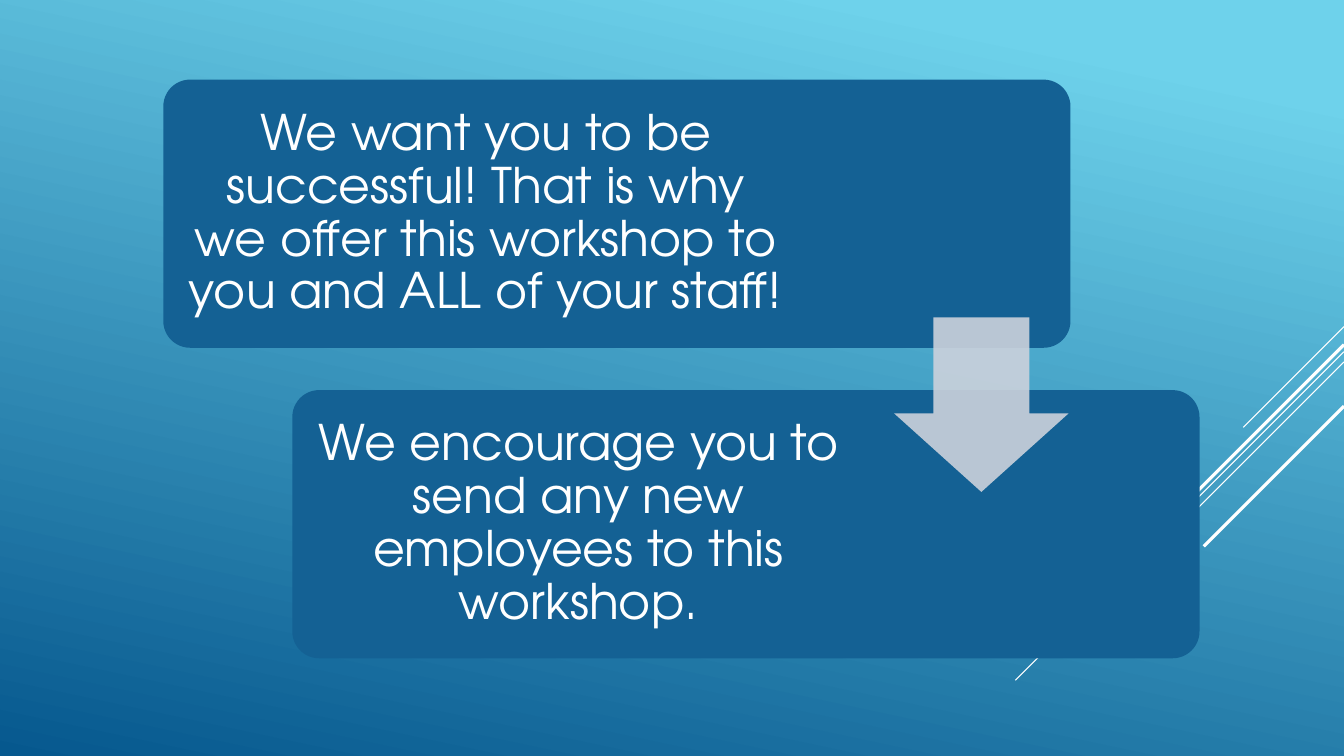
from dataclasses import dataclass

from lxml.etree import SubElement
from pptx import Presentation
from pptx.dml.color import RGBColor
from pptx.enum.shapes import MSO_CONNECTOR, MSO_SHAPE
from pptx.enum.text import MSO_ANCHOR, PP_ALIGN
from pptx.oxml.ns import qn
from pptx.shapes.autoshape import Shape
from pptx.slide import Slide
from pptx.util import Inches, Length, Pt

WIDTH, HEIGHT = 13.333, 7.5
FONT = "TeX Gyre Adventor"
COLOURS = {
    "sky": "6ED2EB",
    "deep": "06588E",
    "card": "146194",
    "arrow": "CCD2DC",
    "white": "FFFFFF",
}
CARD_LEFT, CARD_TOP = 12.15, 10.53
CARD_WIDTH, CARD_HEIGHT = 67.5, 35.47
STEP_RIGHT, STEP_DOWN = 9.6, 41.07
CARD_PADDING = 0.6


@dataclass(frozen=True)
class Streak:
    top: float
    run: float
    weight: float


@dataclass(frozen=True)
class Card:
    text: str
    text_width: float


STREAKS = [
    Streak(43.2, 7.5, 0.75),
    Streak(46.53, 24.45, 0.75),
    Streak(47.87, 15.53, 0.75),
    Streak(45.6, 14.33, 2.25),
    Streak(53.73, 10.43, 2.25),
]
CARDS = [
    Card("We want you to be successful! That is why we offer this workshop "
         "to you and ALL of your staff!", 46.8),
    Card("We encourage you to send any new employees to this workshop.", 41.4),
]


def across(percent: float) -> Length:
    return Inches(WIDTH * percent / 100)


def down(percent: float) -> Length:
    return Inches(HEIGHT * percent / 100)


def colour(name: str) -> RGBColor:
    return RGBColor.from_string(COLOURS[name])


def paint_background(page: Slide) -> None:
    fill = page.background.fill
    fill.gradient()
    fill.gradient_angle = 258
    for stop, position, name in zip(fill.gradient_stops, (0.1, 1), ("sky", "deep")):
        stop.position = position
        stop.color.rgb = colour(name)


def draw_streak(page: Slide, streak: Streak) -> None:
    right, top, run = across(100), down(streak.top), across(streak.run)
    line = page.shapes.add_connector(
        MSO_CONNECTOR.STRAIGHT, right, top, right - run, top + run)
    line.line.color.rgb = colour("white")
    line.line.width = Pt(streak.weight)
    SubElement(line._element.spPr, qn("a:effectLst"))


def draw_shape(page: Slide, kind: MSO_SHAPE, box: tuple[Length, ...],
               fill: str, adjustments: list[float]) -> Shape:
    shape = page.shapes.add_shape(kind, *box)
    shape.shadow.inherit = False
    shape.fill.solid()
    shape.fill.fore_color.rgb = colour(fill)
    shape.line.fill.background()
    for index, value in enumerate(adjustments):
        shape.adjustments[index] = value
    return shape


def write_text(page: Slide, text: str, *, box: tuple[Length, ...], size: float,
               name: str, inset: float, spacing: float) -> None:
    frame = page.shapes.add_textbox(*box).text_frame
    frame.word_wrap = True
    frame.vertical_anchor = MSO_ANCHOR.MIDDLE
    frame.margin_left = frame.margin_right = Inches(inset)
    frame.margin_top = frame.margin_bottom = Inches(inset)
    para = frame.paragraphs[0]
    para.alignment = PP_ALIGN.CENTER
    para.line_spacing = spacing
    span = para.add_run()
    span.text = text
    span.font.name = FONT
    span.font.size = Pt(size)
    span.font.color.rgb = colour(name)


def draw_card(page: Slide, card: Card, index: int) -> None:
    left = across(CARD_LEFT + index * STEP_RIGHT)
    top = down(CARD_TOP + index * STEP_DOWN)
    height, padding = down(CARD_HEIGHT), across(CARD_PADDING)
    draw_shape(page, MSO_SHAPE.ROUNDED_RECTANGLE,
               (left, top, across(CARD_WIDTH), height), "card", [0.1])
    write_text(page, card.text, size=35, name="white", inset=0.15, spacing=0.9,
               box=(left + padding, top + padding,
                    across(card.text_width), height - 2 * padding))


def draw_arrow(page: Slide) -> None:
    side = across(12.98)
    arrow = draw_shape(page, MSO_SHAPE.DOWN_ARROW,
                       (across(66.53), down(42), side, side), "arrow", [0.55, 0.45])
    tint = arrow._element.spPr.find(qn("a:solidFill")).find(qn("a:srgbClr"))
    SubElement(tint, qn("a:alpha")).set("val", "90000")
    arrow.adjustments[0] = 0.45
    arrow.adjustments[1] = 0.45
    arrow.adjustments[0] = 0.55


def main() -> None:
    deck = Presentation()
    deck.slide_width, deck.slide_height = across(100), down(100)
    page = deck.slides.add_slide(deck.slide_layouts[6])
    paint_background(page)
    for streak in STREAKS:
        draw_streak(page, streak)
    for index, card in enumerate(CARDS):
        draw_card(page, card, index)
    draw_arrow(page)
    deck.save("out.pptx")


if __name__ == "__main__":
    main()
